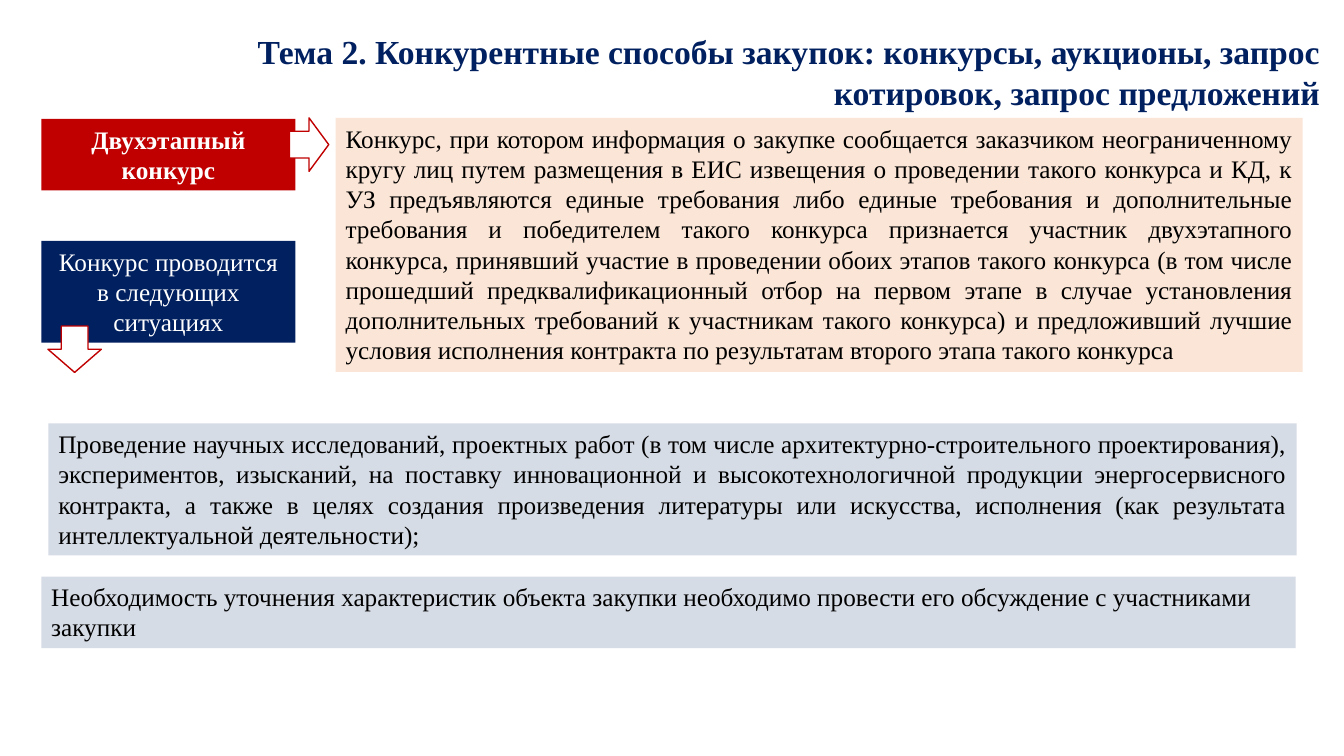
"""Build the slide about the two-stage tender."""
from pptx import Presentation
from pptx.dml.color import RGBColor
from pptx.enum.shapes import MSO_SHAPE
from pptx.enum.text import MSO_ANCHOR, PP_ALIGN
from pptx.util import Inches, Pt

COLORS = {
    "navy": "002060",
    "red": "C00000",
    "peach": "FBE5D6",
    "gray": "D6DCE5",
    "white": "FFFFFF",
    "black": "000000",
}


def write_text(shape, text, size=18, color="black", bold=False, align=PP_ALIGN.LEFT):
    frame = shape.text_frame
    frame.word_wrap = True
    frame.vertical_anchor = MSO_ANCHOR.TOP
    paragraph = frame.paragraphs[0]
    paragraph.alignment = align
    run = paragraph.add_run()
    run.text = text
    run.font.name = "Times New Roman"
    run.font.size = Pt(size)
    run.font.bold = bold
    run.font.color.rgb = RGBColor.from_string(COLORS[color])


def add_filled_shape(slide, kind, box, fill):
    shape = slide.shapes.add_shape(kind, *[Inches(length) for length in box])
    shape.shadow.inherit = False
    shape.fill.solid()
    shape.fill.fore_color.rgb = RGBColor.from_string(COLORS[fill])
    shape.line.fill.background()
    return shape


presentation = Presentation()
presentation.slide_width = Inches(13.33)
presentation.slide_height = Inches(7.5)
slide = presentation.slides.add_slide(presentation.slide_layouts[5])

title = slide.shapes.title
title.left, title.top = Inches(1.47), Inches(0.26)
title.width, title.height = Inches(11.72), Inches(0.91)
write_text(
    title,
    "Тема 2. Конкурентные способы закупок: конкурсы, аукционы, запрос котировок, запрос предложений",
    size=24, color="navy", bold=True, align=PP_ALIGN.RIGHT,
)

panels = [
    ((0.41, 1.18, 2.52, 0.71), "red", "Двухэтапный конкурс",
     {"color": "white", "bold": True, "align": PP_ALIGN.CENTER}),
    ((3.33, 1.17, 9.59, 2.52), "peach",
     "Конкурс, при котором информация о закупке сообщается заказчиком неограниченному кругу лиц "
     "путем размещения в ЕИС извещения о проведении такого конкурса и КД, к УЗ предъявляются "
     "единые требования либо единые требования и дополнительные требования и победителем такого "
     "конкурса признается участник двухэтапного конкурса, принявший участие в проведении обоих "
     "этапов такого конкурса (в том числе прошедший предквалификационный отбор на первом этапе "
     "в случае установления дополнительных требований к участникам такого конкурса) и предложивший "
     "лучшие условия исполнения контракта по результатам второго этапа такого конкурса",
     {"align": PP_ALIGN.JUSTIFY}),
    ((0.48, 4.2, 12.38, 1.31), "gray",
     "Проведение научных исследований, проектных работ (в том числе архитектурно-строительного "
     "проектирования), экспериментов, изысканий, на поставку инновационной и высокотехнологичной "
     "продукции энергосервисного контракта, а также в целях создания произведения литературы или "
     "искусства, исполнения (как результата интеллектуальной деятельности);",
     {"align": PP_ALIGN.JUSTIFY}),
    ((0.41, 2.39, 2.52, 1.01), "navy", "Конкурс проводится в следующих ситуациях",
     {"color": "white", "align": PP_ALIGN.CENTER}),
    ((0.41, 5.72, 12.44, 0.71), "gray",
     "Необходимость уточнения характеристик объекта закупки необходимо провести его обсуждение "
     "с участниками закупки", {}),
]
for box, fill, text, text_format in panels:
    panel = add_filled_shape(slide, MSO_SHAPE.RECTANGLE, box, fill)
    write_text(panel, text, **text_format)

for box, rotation in [((2.87, 1.17, 0.39, 0.53), 0), ((0.51, 3.2, 0.46, 0.53), 90)]:
    arrow = add_filled_shape(slide, MSO_SHAPE.RIGHT_ARROW, box, "white")
    arrow.rotation = rotation
    arrow.line.color.rgb = RGBColor.from_string(COLORS["red"])
    arrow.line.width = Pt(1)

presentation.save("out.pptx")
